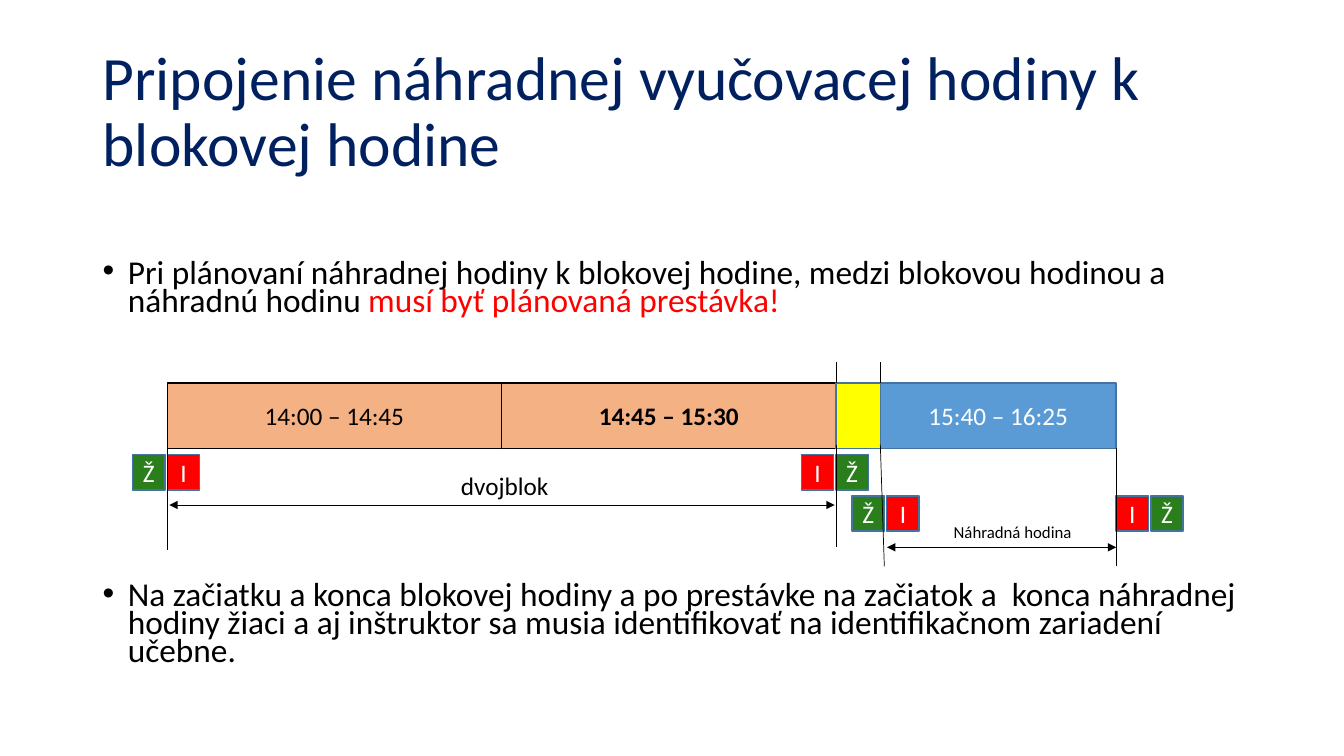
from lxml import etree
from pptx import Presentation
from pptx import util as u
from pptx.dml.color import RGBColor
from pptx.enum import shapes, text
from pptx.oxml.ns import qn

WIDTH, HEIGHT = u.Inches(13.33), u.Inches(7.5)
COLS, ROWS = 100, 75

BLACK = RGBColor(0x00, 0x00, 0x00)
WHITE = RGBColor(0xFF, 0xFF, 0xFF)
NAVY = RGBColor(0x00, 0x20, 0x60)
RED = RGBColor(0xFF, 0x00, 0x00)
GREEN = RGBColor(0x2A, 0x7E, 0x1C)
ORANGE = RGBColor(0xF4, 0xB1, 0x83)
YELLOW = RGBColor(0xFF, 0xFF, 0x00)
BLUE = RGBColor(0x5B, 0x9B, 0xD5)
EDGE = RGBColor(0x43, 0x73, 0x9E)

# Timeline boundaries in columns; bar position in rows
START, BLOCK_END, LESSON_START, LESSON_END = 12.45, 62.2, 65.5, 83.05
MIDDLE = (START + BLOCK_END) / 2
BAR_TOP, BAR_HEIGHT = 38, 6.5
BADGE_STEP = 2.58


def x(col):
    return round(WIDTH * col / COLS)


def y(row):
    return round(HEIGHT * row / ROWS)


def box(col, row, cols, rows):
    return x(col), y(row), x(cols), y(rows)


def add_runs(p, runs, size, bold=False):
    for words, color in runs:
        r = p.add_run()
        r.text = words
        r.font.name = "Calibri"
        r.font.size = u.Pt(size)
        r.font.bold = bold
        r.font.color.rgb = color


def add_text(s, place, runs, size, spacing=1.0, centred=False,
             anchor=text.MSO_ANCHOR.MIDDLE):
    tf = s.shapes.add_textbox(*box(*place)).text_frame
    tf.word_wrap = True
    tf.vertical_anchor = anchor
    p = tf.paragraphs[0]
    p.line_spacing = spacing
    if centred:
        p.alignment = text.PP_ALIGN.CENTER
    add_runs(p, runs, size)
    return p


def add_bullet(s, row, rows, runs):
    p = add_text(s, (6.9, row, 86.27, rows), runs, 23.8, spacing=0.7,
                 anchor=text.MSO_ANCHOR.TOP)
    pPr = p._p.get_or_add_pPr()
    indent = u.Inches(0.25)
    pPr.set("marL", str(indent))
    pPr.set("indent", str(-indent))
    etree.SubElement(pPr, qn("a:buFont"), typeface="Arial")
    etree.SubElement(pPr, qn("a:buChar"), char="•")


def add_rect(s, place, fill, edge=EDGE, label="", color=WHITE, bold=False):
    sp = s.shapes.add_shape(shapes.MSO_SHAPE.RECTANGLE, *box(*place))
    sp.shadow.inherit = False
    sp.fill.solid()
    sp.fill.fore_color.rgb = fill
    sp.line.color.rgb = edge
    sp.line.width = u.Pt(1)
    if label:
        tf = sp.text_frame
        tf.vertical_anchor = text.MSO_ANCHOR.MIDDLE
        p = tf.paragraphs[0]
        p.alignment = text.PP_ALIGN.CENTER
        add_runs(p, [(label, color)], 18, bold)


def add_badges(s, col, row, letters):
    """Side-by-side sign-in badges: Ž for pupils, I for the instructor."""
    for i, letter in enumerate(letters):
        add_rect(s, (col + i * BADGE_STEP, row, 2.4, 3.5),
                 RED if letter == "I" else GREEN, label=letter)


def add_line(s, start, end, arrows=False):
    cn = s.shapes.add_connector(shapes.MSO_CONNECTOR.STRAIGHT,
                                x(start[0]), y(start[1]), x(end[0]), y(end[1]))
    cn.line.color.rgb = BLACK
    cn.line.width = u.Pt(0.5)
    spPr = cn.element.spPr
    if arrows:
        for tag in ("a:headEnd", "a:tailEnd"):
            etree.SubElement(spPr.find(qn("a:ln")), qn(tag), type="triangle")
    etree.SubElement(spPr, qn("a:effectLst"))


def add_timeline(s):
    for left, right, fill, edge, label, color, bold in (
            (START, MIDDLE, ORANGE, BLACK, "14:00 – 14:45", BLACK, False),
            (MIDDLE, BLOCK_END, ORANGE, BLACK, "14:45 – 15:30", BLACK, True),
            (BLOCK_END, LESSON_START, YELLOW, EDGE, "", WHITE, False),
            (LESSON_START, LESSON_END, BLUE, EDGE, "15:40 – 16:25", WHITE, False)):
        add_rect(s, (left, BAR_TOP, right - left, BAR_HEIGHT),
                 fill, edge, label, color, bold)

    for col, row, letters in ((START - BADGE_STEP, 45.1, "ŽI"),
                              (BLOCK_END - BADGE_STEP, 45.1, "IŽ"),
                              (63.4, 49.2, "ŽI"),
                              (LESSON_END, 49.2, "IŽ")):
        add_badges(s, col, row, letters)

    for top, bottom in (((START, 44.4), (START, 54.6)),
                        ((BLOCK_END, 44.1), (BLOCK_END, 54.3)),
                        ((LESSON_START, 44.1), (65.8, 56.2)),
                        ((LESSON_END, 44.4), (LESSON_END, 56.2)),
                        ((BLOCK_END, BAR_TOP), (BLOCK_END, 35.9)),
                        ((LESSON_START, BAR_TOP), (LESSON_START, 35.9))):
        add_line(s, top, bottom)
    add_line(s, (12.6, 50.1), (62.1, 50.1), arrows=True)
    add_line(s, (66, 54.3), (LESSON_END, 54.3), arrows=True)

    add_text(s, (28.5, 46.8, 18.1, 2.7), [("dvojblok", BLACK)], 18, centred=True)
    add_text(s, (69.85, 51.4, 11, 2.8), [("Náhradná hodina", BLACK)], 12,
             centred=True)


def main():
    prs = Presentation()
    prs.slide_width, prs.slide_height = WIDTH, HEIGHT
    s = prs.slides.add_slide(prs.slide_layouts[6])

    add_text(s, (6.9, 4, 86.27, 14.5),
             [("Pripojenie náhradnej vyučovacej hodiny k blokovej hodine", NAVY)],
             44, spacing=0.9)
    add_bullet(s, 25.5, 7, [
        ("Pri plánovaní náhradnej hodiny k blokovej hodine, medzi blokovou "
         "hodinou a náhradnú hodinu ", BLACK),
        ("musí byť plánovaná prestávka!", RED)])
    add_bullet(s, 57.5, 10, [
        ("Na začiatku a konca blokovej hodiny a po prestávke na začiatok a  "
         "konca náhradnej hodiny žiaci a aj inštruktor sa musia identifikovať "
         "na identifikačnom zariadení učebne.", BLACK)])
    add_timeline(s)

    prs.save("out.pptx")


if __name__ == "__main__":
    main()
